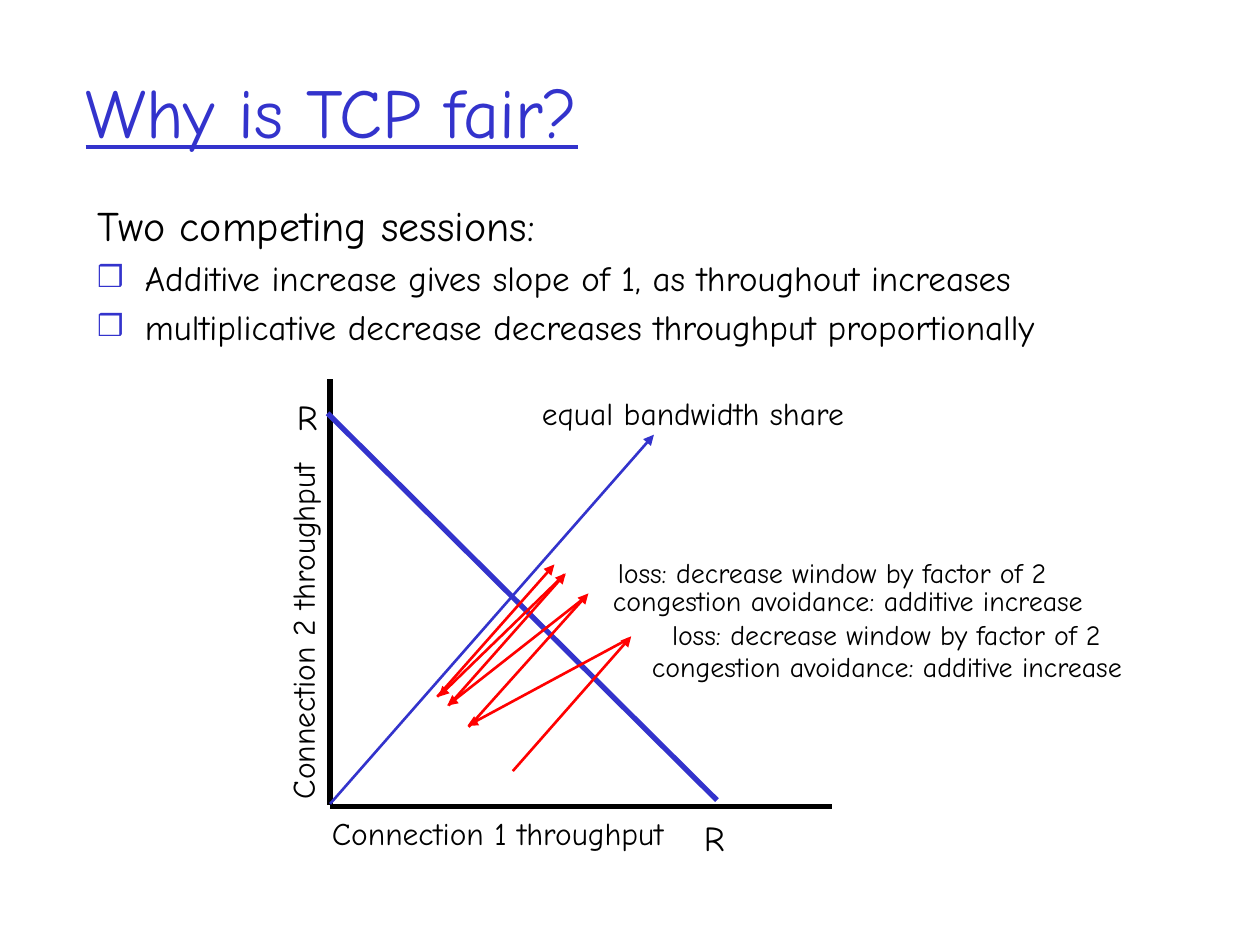
import pptx
import pptx.dml.color
import pptx.enum.shapes
import pptx.enum.text
import pptx.oxml
import pptx.oxml.ns
import pptx.util
import lxml.etree
from dataclasses import dataclass
from pptx.util import Inches


@dataclass(frozen=True)
class Theme:
    font: str = "Comic Neue"
    black: str = "000000"
    blue: str = "3333CC"
    red: str = "FF0000"
    title: int = 40
    lead: int = 24
    body: int = 20
    axis: int = 18
    note: int = 16
    thin: float = 1.5
    thick: float = 3


theme = Theme()
qn = pptx.oxml.ns.qn
RGBColor = pptx.dml.color.RGBColor


def format_paragraph(paragraph, size, color, alignment):
    paragraph.alignment = alignment
    paragraph.font.name = theme.font
    paragraph.font.size = pptx.util.Pt(size)
    paragraph.font.color.rgb = RGBColor.from_string(color)


def add_line(shapes, start, end, color, width, arrow):
    line = shapes.add_connector(
        pptx.enum.shapes.MSO_CONNECTOR.STRAIGHT,
        *[Inches(value) for value in (*start, *end)],
    )
    line.line.color.rgb = RGBColor.from_string(color)
    line.line.width = pptx.util.Pt(width)
    if arrow:
        outline = line.line._get_or_add_ln()
        lxml.etree.SubElement(outline, qn("a:tailEnd"), type="triangle")
    lxml.etree.SubElement(line._element.spPr, qn("a:effectLst"))


presentation = pptx.Presentation()
presentation.slide_width = Inches(10)
presentation.slide_height = Inches(7.5)
slide = presentation.slides.add_slide(presentation.slide_layouts[1])
align = pptx.enum.text.PP_ALIGN

title = slide.shapes.title
title.left, title.top, title.width, title.height = map(Inches, (0.58, 0.25, 8.5, 1.25))
title.text_frame.text = "Why is TCP fair?"
title.text_frame.vertical_anchor = pptx.enum.text.MSO_ANCHOR.MIDDLE
format_paragraph(title.text_frame.paragraphs[0], theme.title, theme.blue, align.LEFT)
title.text_frame.paragraphs[0].font.underline = True

body = slide.placeholders[1]
body.left, body.top, body.width, body.height = map(Inches, (0.67, 1.53, 9.08, 5.08))
body_lines = [
    ("Two competing sessions:", theme.lead, False),
    ("Additive increase gives slope of 1, as throughout increases", theme.body, True),
    ("multiplicative decrease decreases throughput proportionally", theme.body, True),
]
body.text_frame.text = "\n".join(text for text, size, bulleted in body_lines)
for paragraph, (text, size, bulleted) in zip(body.text_frame.paragraphs, body_lines):
    paragraph.space_before = pptx.util.Pt(size * 0.2)
    properties = paragraph._p.get_or_add_pPr()
    properties.set("marL", str(Inches(0.38)))
    properties.set("indent", str(-Inches(0.38)))
    if bulleted:
        bullet_color = lxml.etree.SubElement(properties, qn("a:buClr"))
        lxml.etree.SubElement(bullet_color, qn("a:srgbClr"), val=theme.blue)
        lxml.etree.SubElement(properties, qn("a:buSzPct"), val="85000")
        lxml.etree.SubElement(properties, qn("a:buChar"), char="❒")
    else:
        lxml.etree.SubElement(properties, qn("a:buNone"))
    format_paragraph(paragraph, size, theme.black, align.LEFT)

diagram_lines = [
    ((2.62, 6.4), (6.6, 6.4), theme.black, theme.thick, False),
    ((2.62, 6.39), (2.62, 3.01), theme.black, theme.thick, False),
    ((2.62, 6.38), (5.19, 3.45), theme.blue, theme.thin, True),
    ((2.6, 3.28), (5.69, 6.35), theme.blue, theme.thick, False),
]
window_steps = [
    ((4.07, 6.12), (5.01, 5.05)),
    ((4.99, 5.07), (3.71, 5.76)),
    ((3.72, 5.77), (4.67, 4.71)),
    ((4.62, 4.76), (3.55, 5.6)),
    ((3.56, 5.6), (4.49, 4.55)),
    ((4.48, 4.56), (3.48, 5.53)),
    ((3.47, 5.53), (4.4, 4.48)),
]
for start, end in window_steps:
    diagram_lines.append((start, end, theme.red, theme.thin, True))
for start, end, color, width, arrow in diagram_lines:
    add_line(slide.shapes, start, end, color, width, arrow)

increase = "congestion avoidance: additive increase"
decrease = "loss: decrease window by factor of 2"
labels = [
    ("R", 2.22, 3.09, 0.44, 0.43, theme.body, 0, True),
    ("R", 5.45, 6.43, 0.44, 0.43, theme.body, 0, True),
    ("equal bandwidth share", 3.56, 3.08, 3.88, 0.4, theme.axis, 0, True),
    ("Connection 1 throughput", 2.01, 6.41, 3.88, 0.4, theme.axis, 0, True),
    ("Connection 2 throughput", 0.46, 4.81, 3.88, 0.4, theme.axis, 270, True),
    (increase, 4.56, 5.11, 4.96, 0.37, theme.note, 0, True),
    (decrease, 5.03, 4.85, 4.01, 0.37, theme.note, 0, False),
    (increase, 4.25, 4.58, 4.96, 0.37, theme.note, 0, True),
    (decrease, 4.6, 4.36, 4.01, 0.37, theme.note, 0, False),
]
for text, left, top, width, height, size, rotation, wrap in labels:
    label = slide.shapes.add_textbox(*map(Inches, (left, top, width, height)))
    label.rotation = rotation
    label.text_frame.text = text
    label.text_frame.word_wrap = wrap
    label.text_frame.auto_size = pptx.enum.text.MSO_AUTO_SIZE.SHAPE_TO_FIT_TEXT
    format_paragraph(label.text_frame.paragraphs[0], size, theme.black, align.CENTER)

presentation.save("out.pptx")
